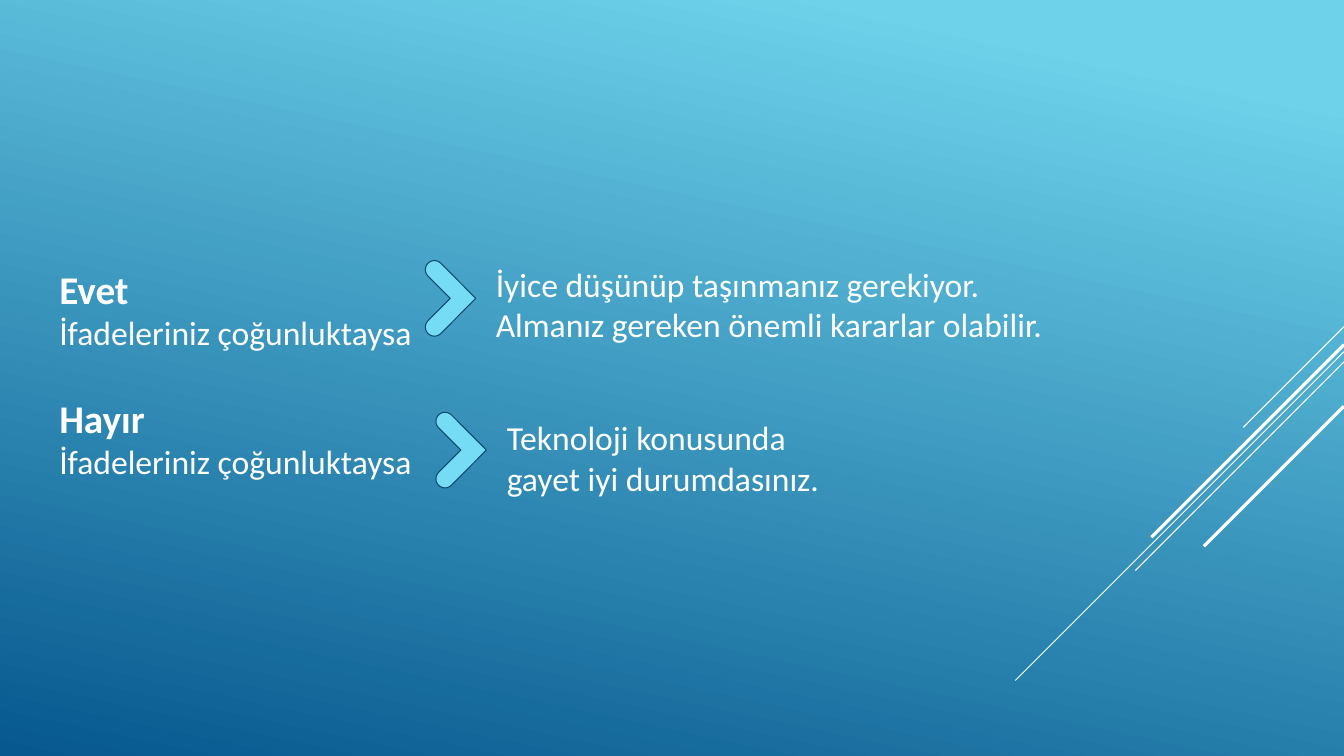
import math

from lxml import etree
from pptx import Presentation, util as u
from pptx.dml.color import RGBColor
from pptx.enum import shapes, text
from pptx.oxml.ns import qn

COLORS = {"sky": "6ED2EB", "deep": "06588E", "white": "FFFFFF",
          "chevron": "76DBF4", "outline": "0F496F"}
FONT = "Calibri"
COLUMNS, ROWS = 133.33, 75  # grid cells of a tenth of an inch


class SlideBuilder:
    def __init__(self, deck):
        self.cell_width = deck.slide_width / COLUMNS
        self.cell_height = deck.slide_height / ROWS
        self.page = deck.slides.add_slide(deck.slide_layouts[6])

    def place(self, column, row):
        return round(column * self.cell_width), round(row * self.cell_height)

    def color(self, name):
        return RGBColor.from_string(COLORS[name])

    def background(self, stops, clockwise_angle):
        fill = self.page.background.fill
        fill.gradient()
        fill.gradient_angle = 360 - clockwise_angle
        for stop, (position, name) in zip(fill.gradient_stops, stops):
            stop.position = position
            stop.color.rgb = self.color(name)

    def diagonal(self, row, length, weight):
        """Line falling at 45 degrees from the right edge of the slide."""
        line = self.page.shapes.add_connector(
            shapes.MSO_CONNECTOR.STRAIGHT, *self.place(COLUMNS, row),
            *self.place(COLUMNS - length, row + length))
        line.line.color.rgb = self.color("white")
        line.line.width = u.Pt(weight)
        etree.SubElement(line._element.spPr, qn("a:effectLst"))

    def chevron(self, column, row, width=5, height=7.5, radius=0.9):
        """Right-pointing chevron with rounded arm ends."""
        middle = height / 2
        upper_end = [(radius + radius * math.cos(math.radians(angle)),
                      radius - radius * math.sin(math.radians(angle)))
                     for angle in range(45, 226, 15)]
        lower_end = [(x, height - y) for x, y in reversed(upper_end)]
        notch = upper_end[-1][0] + middle - upper_end[-1][1]
        outline = [(width, middle), *upper_end, (notch, middle), *lower_end]
        points = [self.place(column + x, row + y) for x, y in outline]
        builder = self.page.shapes.build_freeform(*points[0])
        builder.add_line_segments(points[1:], close=True)
        shape = builder.convert_to_shape()
        shape.shadow.inherit = False
        shape.fill.solid()
        shape.fill.fore_color.rgb = self.color("chevron")
        shape.line.color.rgb = self.color("outline")
        shape.line.width = u.Pt(0.75)

    def text(self, column, row, width, height, lines):
        """Text box with one paragraph for each (words, size, bold)."""
        box = self.page.shapes.add_textbox(
            *self.place(column, row), *self.place(width, height))
        frame = box.text_frame
        frame.word_wrap = False
        frame.auto_size = text.MSO_AUTO_SIZE.SHAPE_TO_FIT_TEXT
        for index, (words, size, bold) in enumerate(lines):
            para = frame.add_paragraph() if index else frame.paragraphs[0]
            span = para.add_run()
            span.text = words
            span.font.name = FONT
            span.font.size = u.Pt(size)
            span.font.bold = bold
            span.font.color.rgb = self.color("white")

    def answer(self, row, label):
        self.text(4.9, row, 37.3, 9.8, [
            (label, 28, True), ("İfadeleriniz çoğunluktaysa", 24, False)])

    def advice(self, column, row, width, lines):
        self.text(column, row, width, 9.1,
                  [(words, 24, False) for words in lines])


def main():
    deck = Presentation()
    deck.slide_width, deck.slide_height = u.Inches(13.333), u.Inches(7.5)
    slide = SlideBuilder(deck)

    # Background and diagonal strokes
    slide.background([(0.1, "sky"), (1, "deep")], 102)
    for row, length, weight in [(32.4, 10, 0.75), (34.9, 32.6, 0.75),
                                (35.9, 20.7, 0.75), (34.2, 19.1, 2.25),
                                (40.3, 13.9, 2.25)]:
        slide.diagonal(row, length, weight)

    # Mostly "yes"
    slide.answer(25.8, "Evet")
    slide.chevron(42.2, 25.85)
    slide.advice(48.2, 25.7, 56.7, [
        "İyice düşünüp taşınmanız gerekiyor.",
        "Almanız gereken önemli kararlar olabilir."])

    # Mostly "no"
    slide.answer(38.6, "Hayır")
    slide.chevron(43.25, 40.9)
    slide.advice(49.3, 40.9, 33.3, [
        "Teknoloji konusunda", "gayet iyi durumdasınız."])

    deck.save("out.pptx")


if __name__ == "__main__":
    main()
